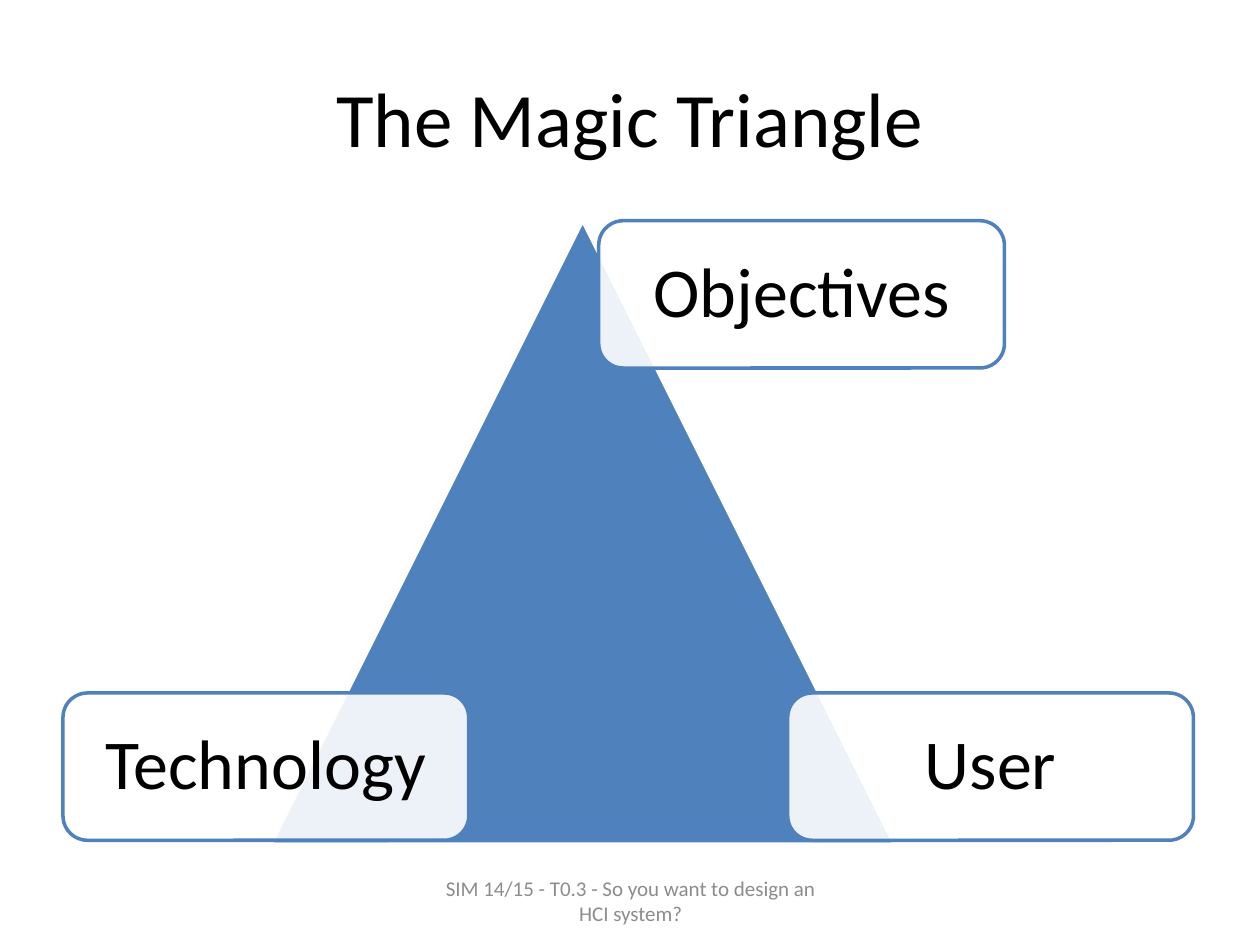
import pptx
import pptx.util
import pptx.dml.color
import pptx.enum.shapes
import pptx.enum.text
import pptx.oxml
import pptx.oxml.ns
import lxml.etree

Cm = pptx.util.Cm
Pt = pptx.util.Pt
RGBColor = pptx.dml.color.RGBColor
SHAPES = pptx.enum.shapes.MSO_SHAPE

BLACK = RGBColor(0x00, 0x00, 0x00)
WHITE = RGBColor(0xFF, 0xFF, 0xFF)
BLUE = RGBColor(0x4F, 0x81, 0xBD)
GREY = RGBColor(0x8C, 0x8C, 0x8C)

BOX_WIDTH, BOX_HEIGHT = 8.18, 2.97
BOX_OPACITY = 90
BOX_MARGIN = Cm(0.43)
# Label, left and top in centimetres
CORNERS = [
    ("Objectives", 12.07, 4.45),
    ("Technology", 1.27, 13.97),
    ("User", 15.88, 13.97),
]


def set_attributes(target, values):
    for name, value in values.items():
        setattr(target, name, value)


def write_text(shape, text, size, color, margins=None, line_spacing=None):
    """Write one centred paragraph, anchored in the middle."""
    frame = shape.text_frame
    set_attributes(frame, {
        "text": text,
        "word_wrap": True,
        "auto_size": pptx.enum.text.MSO_AUTO_SIZE.NONE,
        "vertical_anchor": pptx.enum.text.MSO_ANCHOR.MIDDLE,
    })
    if margins is not None:
        sides = ("left", "top", "right", "bottom")
        set_attributes(frame, {f"margin_{side}": margins for side in sides})
    paragraph = frame.paragraphs[0]
    set_attributes(paragraph, {
        "alignment": pptx.enum.text.PP_ALIGN.CENTER,
        "line_spacing": line_spacing,
    })
    font = paragraph.runs[0].font
    set_attributes(font, {"name": "Calibri", "size": Pt(size)})
    font.color.rgb = color


def add_outlined_shape(slide, kind, left, top, width, height, fill, line):
    shape = slide.shapes.add_shape(kind, Cm(left), Cm(top), Cm(width), Cm(height))
    shape.shadow.inherit = False
    shape.fill.solid()
    shape.fill.fore_color.rgb = fill
    shape.line.color.rgb = line
    shape.line.width = Pt(2)
    return shape


def set_fill_opacity(shape, percent):
    qn = pptx.oxml.ns.qn
    color = shape.fill._xPr.find(qn("a:solidFill")).find(qn("a:srgbClr"))
    lxml.etree.SubElement(color, qn("a:alpha")).set("val", str(percent * 1000))


def add_title(slide, text):
    title = slide.shapes.title
    set_attributes(title, {
        "left": Cm(1.27), "top": Cm(0.76),
        "width": Cm(22.86), "height": Cm(3.18),
    })
    write_text(title, text, 44, BLACK)


def add_corner_box(slide, label, left, top):
    box = add_outlined_shape(slide, SHAPES.ROUNDED_RECTANGLE, left, top,
                             BOX_WIDTH, BOX_HEIGHT, WHITE, BLUE)
    set_fill_opacity(box, BOX_OPACITY)
    write_text(box, label, 40, BLACK, BOX_MARGIN, 0.9)


def add_footer(slide, text):
    footer = slide.shapes.add_textbox(Cm(8.69), Cm(17.65), Cm(8.05), Cm(1.02))
    write_text(footer, text, 12, GREY)


def main():
    presentation = pptx.Presentation()
    presentation.slide_width = Cm(25.4)
    presentation.slide_height = Cm(19.05)
    slide = presentation.slides.add_slide(presentation.slide_layouts[5])

    add_title(slide, "The Magic Triangle")
    # Triangle behind its three corner boxes
    add_outlined_shape(slide, SHAPES.ISOSCELES_TRIANGLE, 5.46, 4.45,
                       12.57, 12.57, BLUE, WHITE)
    for label, left, top in CORNERS:
        add_corner_box(slide, label, left, top)
    add_footer(slide, "SIM 14/15 - T0.3 - So you want to design an HCI system?")

    presentation.save("out.pptx")


if __name__ == "__main__":
    main()
